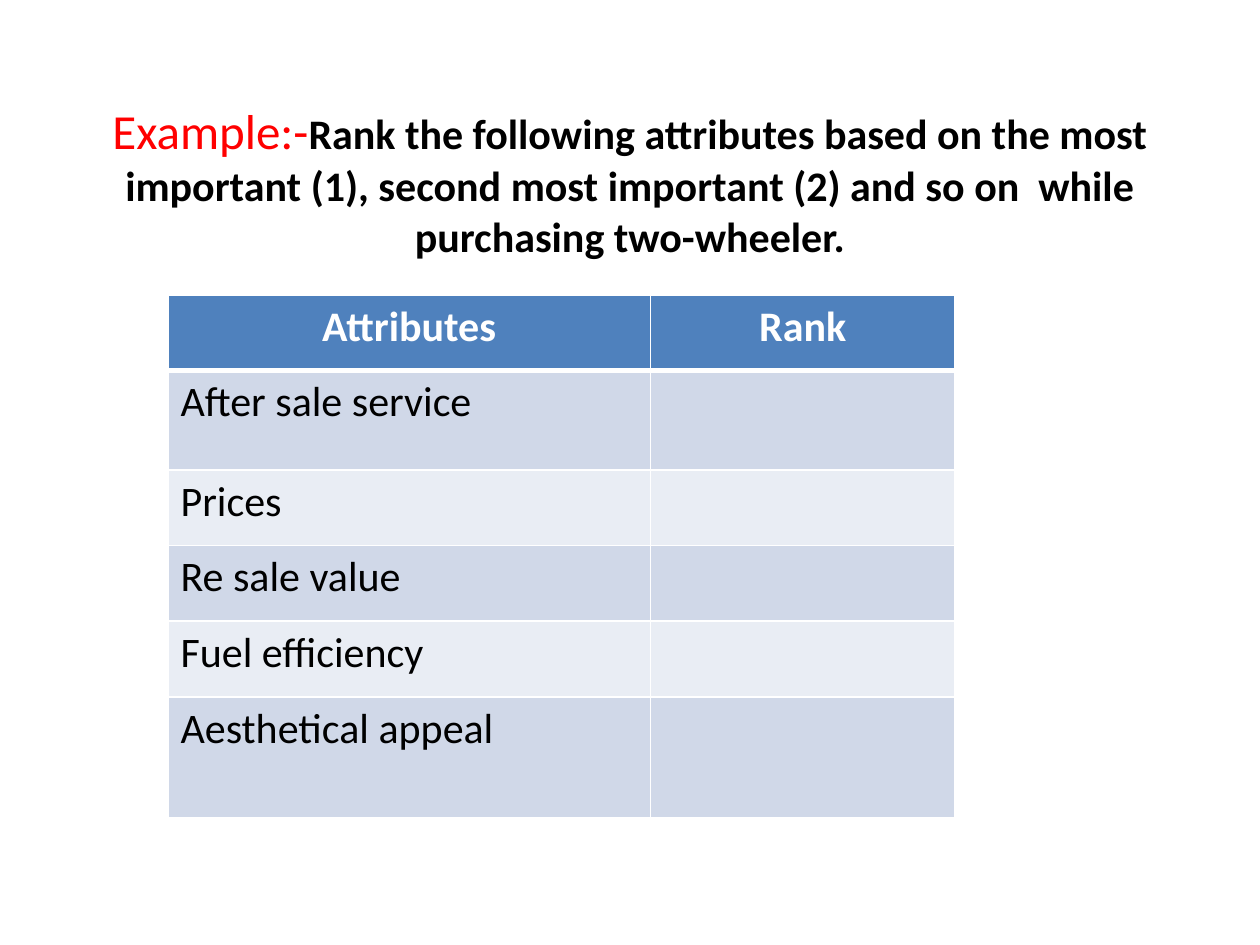
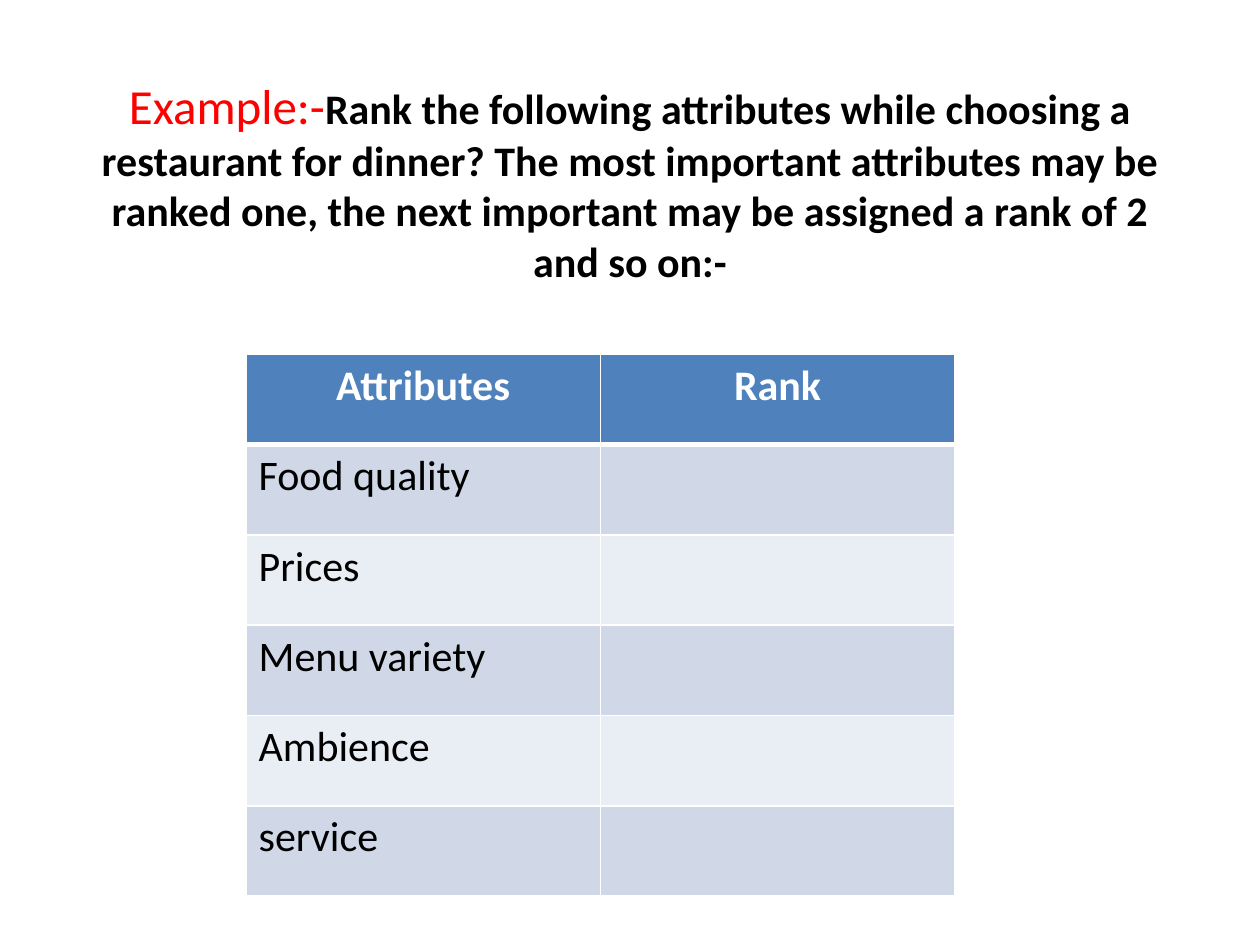
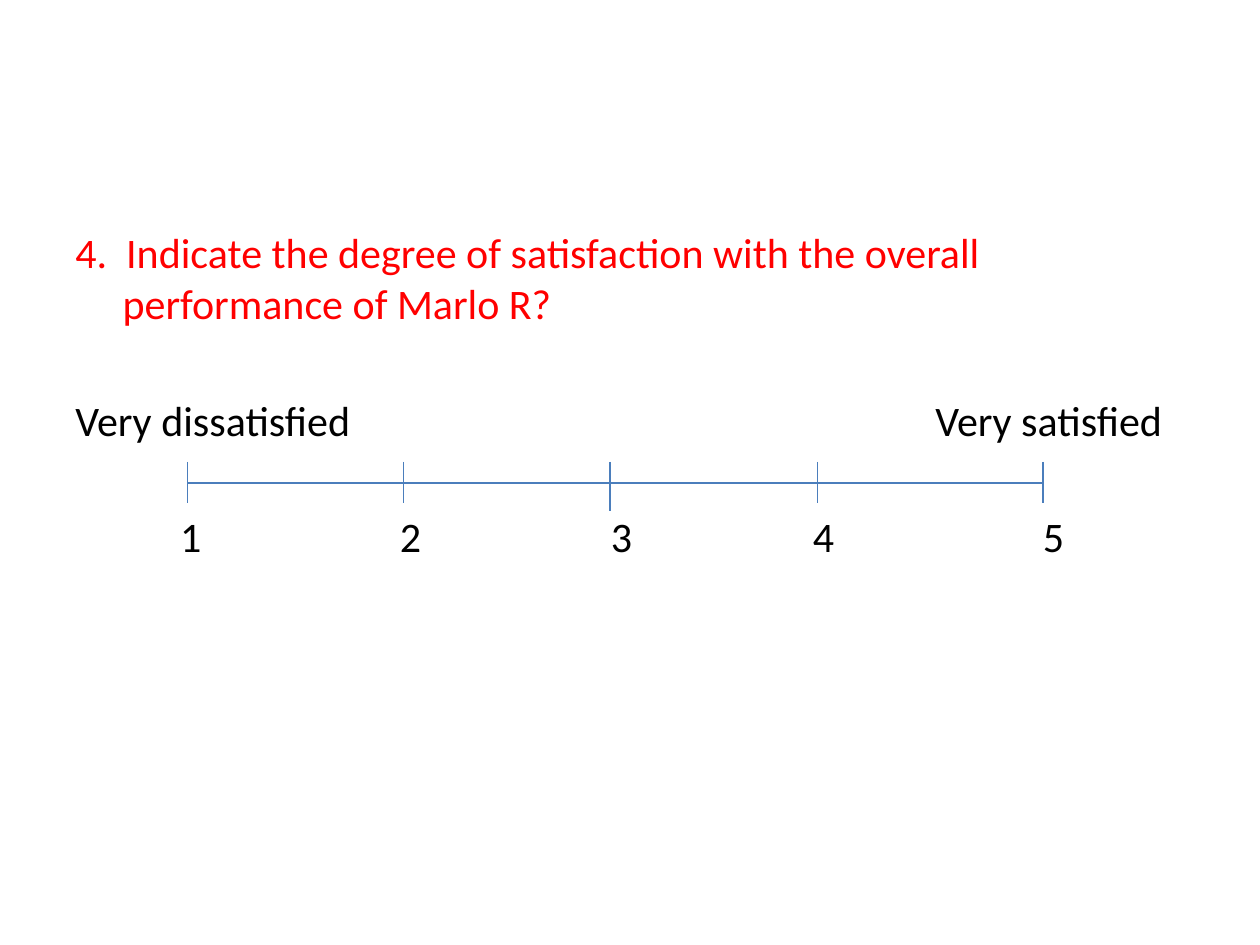
from dataclasses import dataclass

from lxml import etree
from pptx import Presentation
from pptx.dml.color import RGBColor
from pptx.enum.shapes import MSO_CONNECTOR
from pptx.enum.text import MSO_ANCHOR, PP_ALIGN
from pptx.oxml.ns import qn
from pptx.oxml.xmlchemy import OxmlElement
from pptx.slide import Slide
from pptx.util import Pt

STRAIGHT = MSO_CONNECTOR.STRAIGHT
MIDDLE = MSO_ANCHOR.MIDDLE
CENTER, LEFT = PP_ALIGN.CENTER, PP_ALIGN.LEFT

COLORS = {
    "accent": "FF0000",
    "text": "000000",
    "white": "FFFFFF",
    "header": "4F81BD",
    "band_dark": "D0D8E8",
    "band_light": "E9EDF4",
    "scale": "4B7EBC",
}
FONT = "Calibri"
BODY_SIZE = 24
EXAMPLE_SIZE = 28
MARGIN_LEFT = 36
CONTENT_WIDTH = 648


@dataclass(frozen=True)
class RankingSlide:
    question: str
    left: float
    top: float
    column_widths: tuple[float, ...]
    row_heights: tuple[float, ...]
    attributes: tuple[str, ...]


@dataclass(frozen=True)
class ScaleMark:
    label: str
    label_x: float  # centre of the label, from the text edge
    tick_x: float
    tick_bottom: float = 287.5


RANKING_SLIDES = (
    RankingSlide(
        "Rank the following attributes based on the most important (1), "
        "second most important (2) and so on  while purchasing two-wheeler.",
        96, 168.7, (275.6, 174.2), (43.2, 56.7, 43.2, 43.2, 43.2, 69),
        ("After sale service", "Prices", "Re sale value", "Fuel efficiency",
         "Aesthetical appeal"),
    ),
    RankingSlide(
        "Rank the following attributes while choosing a restaurant for dinner? "
        "The most important attributes may be ranked one, the next important "
        "may be assigned a rank of 2 and so on:-",
        140.6, 202.5, (202.5, 202.5), (51.6,) * 6,
        ("Food quality", "Prices", "Menu variety", "Ambience", "service"),
    ),
)

SCALE_TOP, SCALE_Y = 264, 276
SCALE_MARKS = (
    ScaleMark("1", 66, 107),
    ScaleMark("2", 191.5, 230.4),
    ScaleMark("3", 312, 348.5, 292),
    ScaleMark("4", 427.5, 467),
    ScaleMark("5", 559, 596),
)


def add_text(paragraph, text: str, *, size: float = BODY_SIZE,
             color: str = "text", bold: bool = False, align=LEFT,
             space_before: float = 0) -> None:
    """Append a formatted run to a paragraph."""
    paragraph.alignment = align
    paragraph.space_before = Pt(space_before)
    run = paragraph.add_run()
    run.text = text
    run.font.name = FONT
    run.font.size = Pt(size)
    run.font.bold = bold
    run.font.color.rgb = RGBColor.from_string(COLORS[color])


def add_text_frame(slide: Slide, top: float, height: float):
    shape = slide.shapes.add_textbox(
        Pt(MARGIN_LEFT), Pt(top), Pt(CONTENT_WIDTH), Pt(height))
    shape.text_frame.word_wrap = True
    return shape.text_frame


def add_title(slide: Slide, question: str) -> None:
    frame = add_text_frame(slide, 78.5, 78.5)
    frame.vertical_anchor = MIDDLE
    frame.margin_bottom = Pt(32.5)  # lifts the title by half a line
    paragraph = frame.paragraphs[0]
    add_text(paragraph, "Example:-", size=EXAMPLE_SIZE, color="accent", align=CENTER)
    add_text(paragraph, question, bold=True, align=CENTER)


def style_cell(cell, fill: str, borders: dict[str, float]) -> None:
    """Set white borders (side: width) and a solid fill."""
    properties = cell._tc.get_or_add_tcPr()
    for side, width in borders.items():
        line = etree.SubElement(properties, qn(f"a:ln{side}"), w=str(Pt(width)))
        solid = etree.SubElement(line, qn("a:solidFill"))
        etree.SubElement(solid, qn("a:srgbClr"), val=COLORS["white"])
    cell.fill.solid()
    cell.fill.fore_color.rgb = RGBColor.from_string(COLORS[fill])


def add_ranking_table(slide: Slide, content: RankingSlide) -> None:
    rows = [("Attributes", "Rank")] + [(name, "") for name in content.attributes]
    table = slide.shapes.add_table(
        len(rows), len(content.column_widths), Pt(content.left), Pt(content.top),
        Pt(sum(content.column_widths)), Pt(sum(content.row_heights))).table
    for column, width in zip(table.columns, content.column_widths):
        column.width = Pt(width)
    for row, height in zip(table.rows, content.row_heights):
        row.height = Pt(height)

    for row_index, texts in enumerate(rows):
        is_header = row_index == 0
        band = "band_dark" if row_index % 2 else "band_light"
        borders = {"L": 1, "R": 1, "T": 3 if row_index == 1 else 1,
                   "B": 3 if is_header else 1}
        for column_index, text in enumerate(texts):
            cell = table.cell(row_index, column_index)
            style_cell(cell, "header" if is_header else band, borders)
            if text:
                add_text(cell.text_frame.paragraphs[0], text, bold=is_header,
                         color="white" if is_header else "text",
                         align=CENTER if is_header else LEFT)


def set_indent(paragraph, left: float, first_line: float) -> None:
    properties = paragraph._p.get_or_add_pPr()
    properties.set("marL", str(Pt(left)))
    properties.set("indent", str(Pt(first_line)))


def set_tabs(paragraph, positions: list[float], alignment: str) -> None:
    tab_list = OxmlElement("a:tabLst")
    for position in positions:
        etree.SubElement(tab_list, qn("a:tab"), pos=str(Pt(position)), algn=alignment)
    paragraph._p.get_or_add_pPr().append(tab_list)


def add_line(slide: Slide, x1: float, y1: float, x2: float, y2: float) -> None:
    connector = slide.shapes.add_connector(STRAIGHT, Pt(x1), Pt(y1), Pt(x2), Pt(y2))
    connector.line.color.rgb = RGBColor.from_string(COLORS["scale"])
    connector.line.width = Pt(0.75)
    connector._element.spPr.append(OxmlElement("a:effectLst"))


def add_satisfaction_scale(slide: Slide) -> None:
    # Question, end labels and numbers
    frame = add_text_frame(slide, 126, 356.4)
    question = frame.paragraphs[0]
    add_text(question, "4.  Indicate the degree of satisfaction with the overall "
             "performance of Marlo R?", color="accent")
    set_indent(question, 27, -27)

    end_labels = frame.add_paragraph()
    add_text(end_labels, "Very dissatisfied\tVery satisfied", space_before=38)
    set_tabs(end_labels, [621], "r")

    numbers = frame.add_paragraph()
    add_text(numbers, "".join(f"\t{mark.label}" for mark in SCALE_MARKS),
             space_before=38)
    set_tabs(numbers, [mark.label_x for mark in SCALE_MARKS], "ctr")

    # Axis and ticks
    add_line(slide, SCALE_MARKS[0].tick_x, SCALE_Y, SCALE_MARKS[-1].tick_x, SCALE_Y)
    for mark in SCALE_MARKS:
        add_line(slide, mark.tick_x, SCALE_TOP, mark.tick_x, mark.tick_bottom)


def main() -> None:
    presentation = Presentation()
    presentation.slide_width, presentation.slide_height = Pt(720), Pt(540)
    blank_layout = presentation.slide_layouts[6]

    for content in RANKING_SLIDES:
        slide = presentation.slides.add_slide(blank_layout)
        add_title(slide, content.question)
        add_ranking_table(slide, content)

    add_satisfaction_scale(presentation.slides.add_slide(blank_layout))
    presentation.save("out.pptx")


if __name__ == "__main__":
    main()
